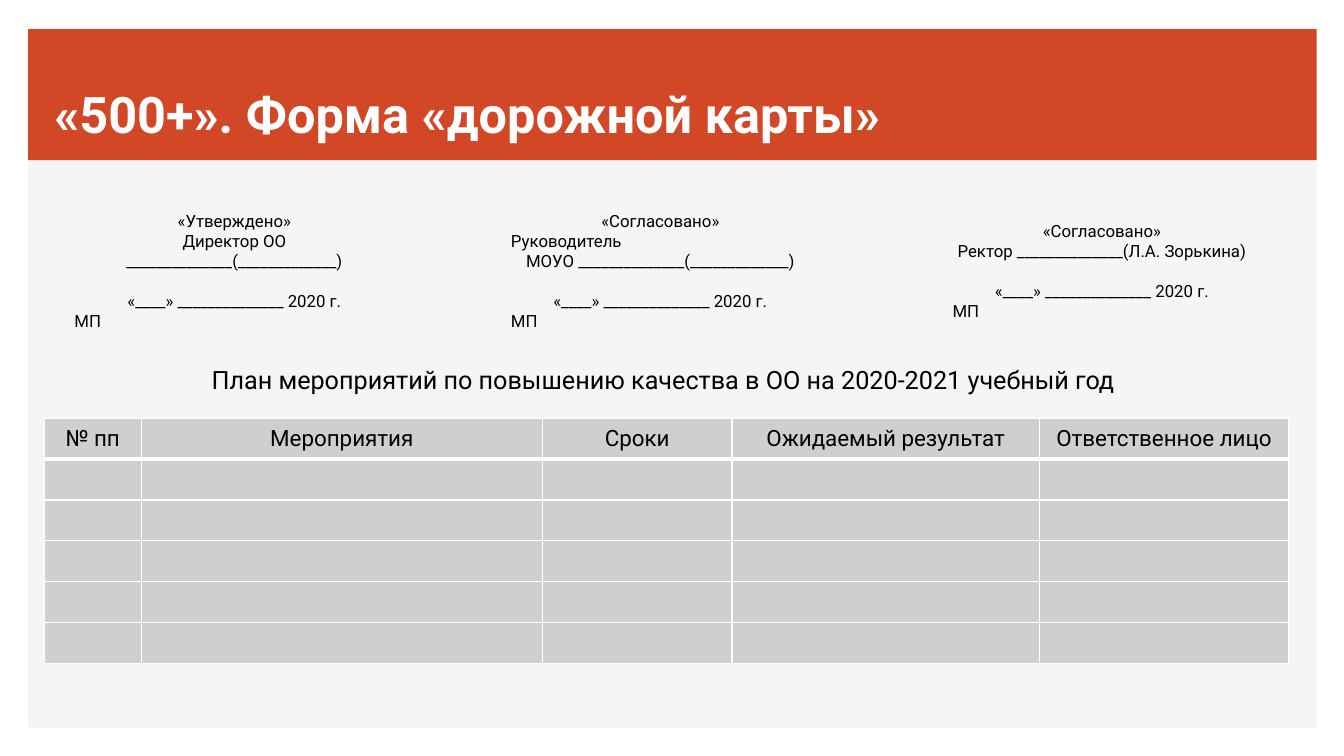
from lxml import etree
from pptx import Presentation, util as u
from pptx.dml.color import RGBColor
from pptx.enum import shapes, text
from pptx.oxml.ns import qn

# Content
COLORS = {"white": "FFFFFF", "panel": "F5F5F5", "band": "D24726",
          "cell": "D0CECE", "ink": "000000"}
FONT = "Roboto"
LEFT, CENTER = text.PP_ALIGN.LEFT, text.PP_ALIGN.CENTER
TOP, MIDDLE, BOTTOM = (text.MSO_ANCHOR.TOP, text.MSO_ANCHOR.MIDDLE,
                       text.MSO_ANCHOR.BOTTOM)

BACKGROUND = [("panel", (28, 29, 1278, 693)), ("band", (28, 29, 1278, 130))]
TITLE = "«500+». Форма «дорожной карты»"
SUBTITLE = "План мероприятий по повышению качества в ОО на 2020-2021 учебный год"

DATE = "«____» ______________ 2020 г."
STAMP = "МП"
# Each approval: left, width, lines above the date with their alignment
APPROVALS = [
    (64, 337, [("«Утверждено»", CENTER),
               ("Директор ОО ______________(_____________)", CENTER)]),
    (497, 316, [("«Согласовано»", CENTER), ("Руководитель", LEFT),
                ("МОУО ______________(_____________)", CENTER)]),
    (935, 316, [("«Согласовано»", CENTER),
                ("Ректор ______________(Л.А. Зорькина)", CENTER)]),
]
APPROVAL_TOP, APPROVAL_HEIGHT, DATE_GAP = 180, 177, 14

COLUMNS = [("№ пп", 96), ("Мероприятия", 398), ("Сроки", 188),
           ("Ожидаемый результат", 305), ("Ответственное лицо", 247)]
ROW_COUNT = 6
TABLE_LEFT, TABLE_TOP, TABLE_HEIGHT = 44, 415, 243


# Helpers
def px(length):
    return u.Emu(length * 9144)


def color(name):
    return RGBColor.from_string(COLORS[name])


def write(paragraph, words, size, ink="ink", bold=False, align=LEFT):
    paragraph.alignment = align
    run = paragraph.add_run()
    run.text = words
    formats = {"name": FONT, "size": u.Pt(size), "bold": bold}
    for name, value in formats.items():
        setattr(run.font, name, value)
    run.font.color.rgb = color(ink)


def add_frame(slide, box, anchor):
    frame = slide.shapes.add_textbox(*map(px, box)).text_frame
    formats = {"word_wrap": True, "vertical_anchor": anchor}
    for name, value in formats.items():
        setattr(frame, name, value)
    return frame


def add_border(cell, side, points):
    properties = cell._tc.get_or_add_tcPr()
    line = etree.SubElement(properties, qn("a:ln" + side), w=str(u.Pt(points)))
    fill = etree.SubElement(line, qn("a:solidFill"))
    etree.SubElement(fill, qn("a:srgbClr"), val=COLORS["white"])


def add_background(slide):
    for name, box in BACKGROUND:
        shape = slide.shapes.add_shape(shapes.MSO_SHAPE.RECTANGLE, *map(px, box))
        shape.shadow.inherit = False
        shape.fill.solid()
        shape.fill.fore_color.rgb = color(name)
        shape.line.fill.background()


def add_approval(slide, left, width, lines):
    box = (left, APPROVAL_TOP, width, APPROVAL_HEIGHT)
    frame = add_frame(slide, box, MIDDLE)
    lines = lines + [(DATE, CENTER), (STAMP, LEFT)]
    for index, (words, align) in enumerate(lines):
        paragraph = frame.add_paragraph() if index else frame.paragraphs[0]
        write(paragraph, words, 12, align=align)
        if words == DATE:
            paragraph.space_before = u.Pt(DATE_GAP)


def add_plan(slide):
    width = sum(column_width for _, column_width in COLUMNS)
    box = (TABLE_LEFT, TABLE_TOP, width, TABLE_HEIGHT)
    table = slide.shapes.add_table(ROW_COUNT, len(COLUMNS), *map(px, box)).table
    for index, (heading, column_width) in enumerate(COLUMNS):
        table.columns[index].width = px(column_width)
        for row in range(ROW_COUNT):
            cell = table.cell(row, index)
            weights = {"L": 1, "R": 1, "T": 3 if row == 1 else 1,
                       "B": 3 if row == 0 else 1}
            for side, points in weights.items():
                add_border(cell, side, points)
            cell.fill.solid()
            cell.fill.fore_color.rgb = color("cell")
            cell.vertical_anchor = MIDDLE
            cell.margin_top = cell.margin_bottom = px(4)
        write(table.cell(0, index).text_frame.paragraphs[0], heading, 16,
              align=CENTER)


def main():
    presentation = Presentation()
    presentation.slide_width, presentation.slide_height = px(1333), px(750)
    slide = presentation.slides.add_slide(presentation.slide_layouts[6])

    # Background and title
    add_background(slide)
    title = add_frame(slide, (44, 49, 1116, 98), BOTTOM)
    write(title.paragraphs[0], TITLE, 36, "white", bold=True)

    # Plan table, approvals and table heading
    add_plan(slide)
    for approval in APPROVALS:
        add_approval(slide, *approval)
    subtitle = add_frame(slide, (200, 357, 975, 40), TOP)
    write(subtitle.paragraphs[0], SUBTITLE, 18)

    presentation.save("out.pptx")


if __name__ == "__main__":
    main()
